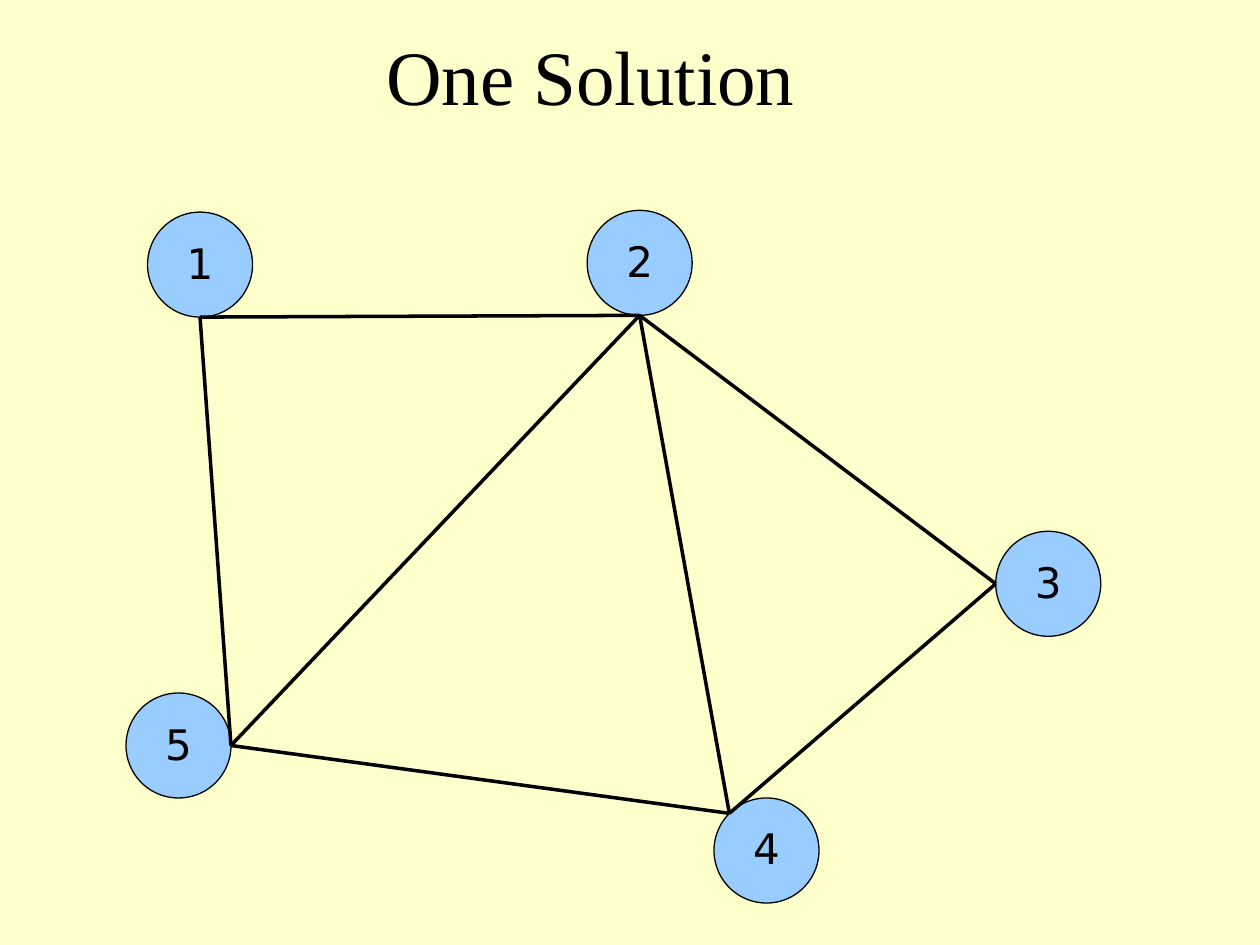
"""Build a slide showing one solution of a five-node graph."""
import math

import pptx
import pptx.util
import pptx.dml.color
import pptx.enum.shapes
import pptx.enum.text
import pptx.oxml

Pt = pptx.util.Pt
Align = pptx.enum.text.PP_ALIGN
Anchor = pptx.enum.text.MSO_ANCHOR
Fit = pptx.enum.text.MSO_AUTO_SIZE
Shape = pptx.enum.shapes.MSO_SHAPE
Line = pptx.enum.shapes.MSO_CONNECTOR

HUES = {"page": "FFFFCC", "node": "99CCFF", "ink": "000000"}
TITLE = "One Solution"
SIZE = 60
LABEL = (29.5, 35.3)
NODES = {
    "4": {"left": 408, "top": 456, "port": 225},
    "3": {"left": 569, "top": 303.6, "port": 180},
    "2": {"left": 335.5, "top": 120.2, "port": 90},
    "5": {"left": 72, "top": 396, "port": 0},
    "1": {"left": 84.3, "top": 121.2, "port": 90},
}
EDGES = ["24", "23", "21", "15", "45", "25", "43"]


def hue(name):
    return pptx.dml.color.RGBColor.from_string(HUES[name])


def write(frame, text, font, size):
    frame.vertical_anchor = Anchor.MIDDLE
    para = frame.paragraphs[0]
    para.alignment = Align.CENTER
    para.line_spacing = 0.96
    run = para.add_run()
    run.text = text
    run.font.name = font
    run.font.size = Pt(size)
    run.font.color.rgb = hue("ink")


def stroke(line, width):
    line.color.rgb = hue("ink")
    line.width = Pt(width)


def port(name):
    node = NODES[name]
    angle = math.radians(node["port"])
    half = SIZE / 2
    return (Pt(node["left"] + half + half * math.cos(angle)),
            Pt(node["top"] + half + half * math.sin(angle)))


def add_node(slide, name, node):
    group = slide.shapes.add_group_shape()
    left, top = node["left"], node["top"]
    disc = group.shapes.add_shape(
        Shape.OVAL, Pt(left), Pt(top), Pt(SIZE), Pt(SIZE))
    disc.shadow.inherit = False
    disc.fill.solid()
    disc.fill.fore_color.rgb = hue("node")
    stroke(disc.line, 0.75)
    wide, high = LABEL
    label = group.shapes.add_textbox(
        Pt(left + (SIZE - wide) / 2), Pt(top + (SIZE - high) / 2),
        Pt(wide), Pt(high))
    frame = label.text_frame
    frame.word_wrap = False
    frame.auto_size = Fit.SHAPE_TO_FIT_TEXT
    write(frame, name, "DejaVu Sans", 24)


def add_edge(slide, start, end):
    edge = slide.shapes.add_connector(
        Line.STRAIGHT, *port(start), *port(end))
    stroke(edge.line, 2)
    props = edge._element.spPr
    props.append(pptx.oxml.parse_xml(
        '<a:effectLst xmlns:a='
        '"http://schemas.openxmlformats.org/drawingml/2006/main"/>'))


def main():
    deck = pptx.Presentation()
    deck.slide_width, deck.slide_height = Pt(720), Pt(540)
    slide = deck.slides.add_slide(deck.slide_layouts[5])
    slide.background.fill.solid()
    slide.background.fill.fore_color.rgb = hue("page")

    title = slide.shapes.title
    title.left, title.top = Pt(31.5), Pt(18)
    title.width, title.height = Pt(612), Pt(54)
    write(title.text_frame, TITLE, "Times New Roman", 44)
    title.text_frame.auto_size = Fit.NONE

    for name, node in NODES.items():
        add_node(slide, name, node)
    for start, end in EDGES:
        add_edge(slide, start, end)
    deck.save("out.pptx")


if __name__ == "__main__":
    main()
